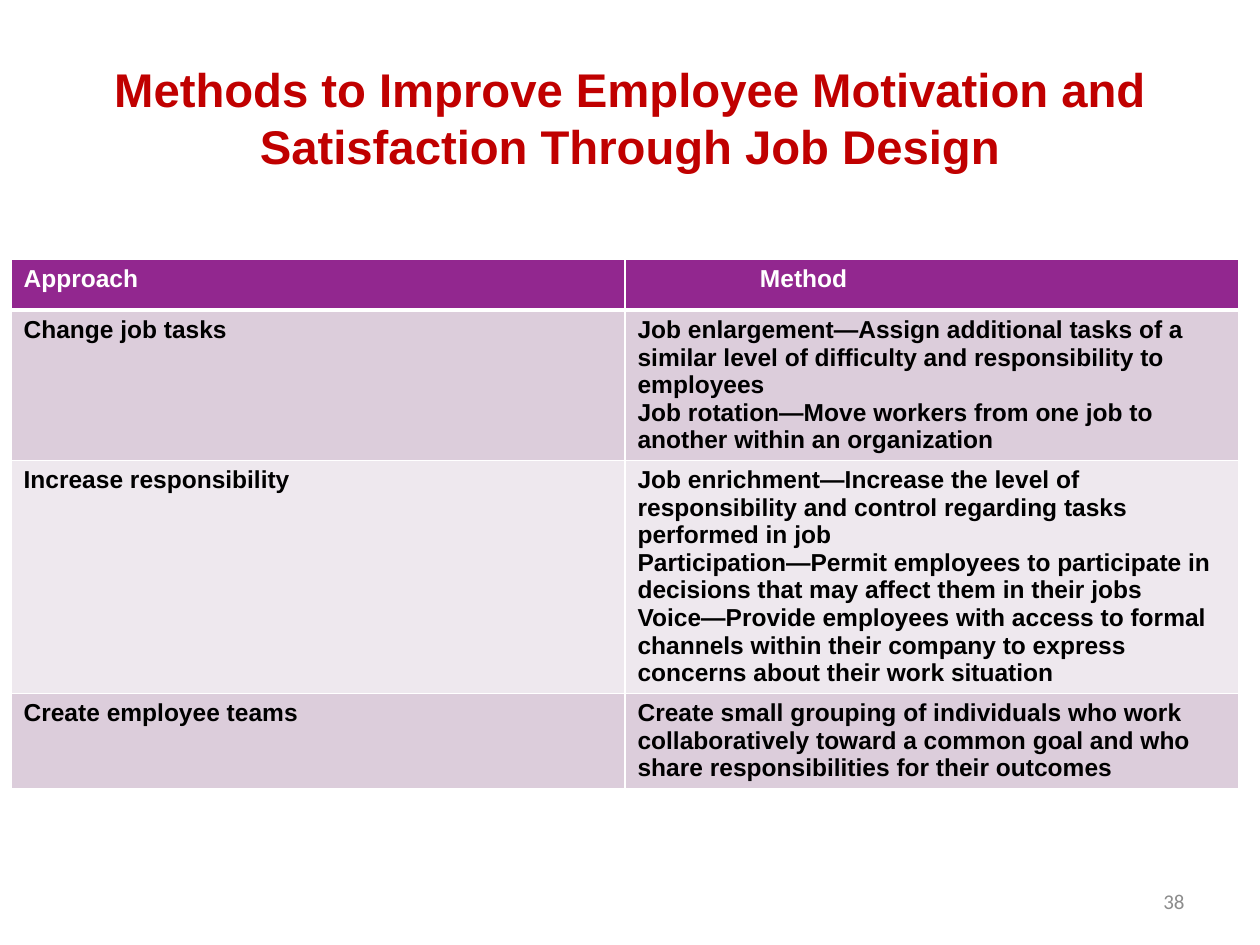
from dataclasses import dataclass
from pptx import Presentation
from pptx.dml.color import RGBColor
from pptx.enum.text import MSO_ANCHOR, MSO_AUTO_SIZE, PP_ALIGN
from pptx.oxml.ns import qn
from pptx.util import Pt
from lxml.etree import Element, SubElement


@dataclass(frozen=True)
class Theme:
    face: str = "Arial"
    foot: str = "Calibri"
    red: str = "C00000"
    head: str = "92278F"
    dark: str = "DCCDDB"
    light: str = "EEE8EE"
    ink: str = "000000"
    white: str = "FFFFFF"
    gray: str = "8C8C8C"
    big: int = 27
    text: int = 14
    small: int = 12
    thin: int = 1
    thick: int = 3


THEME = Theme()
SCALE = 914400 / 126
TITLE = "Methods to Improve Employee Motivation and Satisfaction Through Job Design"
ROWS = [
    (51, "Approach", ["Method"]),
    (150, "Change job tasks", [
        "Job enlargement—Assign additional tasks of a similar level of difficulty and responsibility to employees",
        "Job rotation—Move workers from one job to another within an organization",
    ]),
    (233, "Increase responsibility", [
        "Job enrichment—Increase the level of responsibility and control regarding tasks performed in job",
        "Participation—Permit employees to participate in decisions that may affect them in their jobs",
        "Voice—Provide employees with access to formal channels within their company to express concerns about their work situation",
    ]),
    (95, "Create employee teams", [
        "Create small grouping of individuals who work collaboratively toward a common goal and who share responsibilities for their outcomes",
    ]),
]


def px(n):
    return round(n * SCALE)


def style(para, face, size, color, bold=False):
    font = para.font
    font.name, font.size, font.bold = face, Pt(size), bold
    font.color.rgb = RGBColor.from_string(color)


def border(cell, top, base):
    props = cell._tc.get_or_add_tcPr()
    sides = {"L": THEME.thin, "R": THEME.thin, "T": top, "B": base}
    for place, (side, width) in enumerate(sides.items()):
        line = Element(qn(f"a:ln{side}"), w=str(Pt(width)))
        fill = SubElement(line, qn("a:solidFill"))
        SubElement(fill, qn("a:srgbClr"), val=THEME.white)
        props.insert(place, line)


def add_title(slide, left, top, width, height):
    title = slide.shapes.title
    title.left, title.top = px(left), px(top)
    title.width, title.height = px(width), px(height)
    frame = title.text_frame
    frame.text = TITLE
    frame.auto_size = MSO_AUTO_SIZE.NONE
    frame.vertical_anchor = MSO_ANCHOR.MIDDLE
    para = frame.paragraphs[0]
    para.alignment = PP_ALIGN.CENTER
    style(para, THEME.face, THEME.big, THEME.red, True)


def add_grid(slide, left, top, width):
    height = sum(row[0] for row in ROWS)
    table = slide.shapes.add_table(
        len(ROWS), 2, px(left), px(top), px(width), px(height)).table
    for col in table.columns:
        col.width = px(width / 2)
    for r, (tall, name, lines) in enumerate(ROWS):
        table.rows[r].height = px(tall)
        shade = THEME.head if r == 0 else THEME.dark if r % 2 else THEME.light
        color = THEME.white if r == 0 else THEME.ink
        for c, text in enumerate((name, "\n".join(lines))):
            cell = table.cell(r, c)
            cell.text = text
            cell.fill.solid()
            cell.fill.fore_color.rgb = RGBColor.from_string(shade)
            border(cell, THEME.thick if r == 1 else THEME.thin,
                   THEME.thick if r == 0 else THEME.thin)
            for para in cell.text_frame.paragraphs:
                style(para, THEME.face, THEME.text, color, True)
    table.cell(0, 1).margin_left = px(135)


def add_number(slide, left, top, width, height):
    frame = slide.shapes.add_textbox(
        px(left), px(top), px(width), px(height)).text_frame
    frame.word_wrap = True
    frame.vertical_anchor = MSO_ANCHOR.MIDDLE
    para = frame.paragraphs[0]
    para.text = "38"
    para.alignment = PP_ALIGN.RIGHT
    style(para, THEME.foot, THEME.small, THEME.gray)


def main():
    deck = Presentation()
    deck.slide_width, deck.slide_height = px(1260), px(945)
    slide = deck.slides.add_slide(deck.slide_layouts[5])
    add_title(slide, 0, 38, 1260, 158)
    add_grid(slide, 11, 259, 1228)
    add_number(slide, 1134, 876, 63, 50)
    deck.save("out.pptx")


if __name__ == "__main__":
    main()
